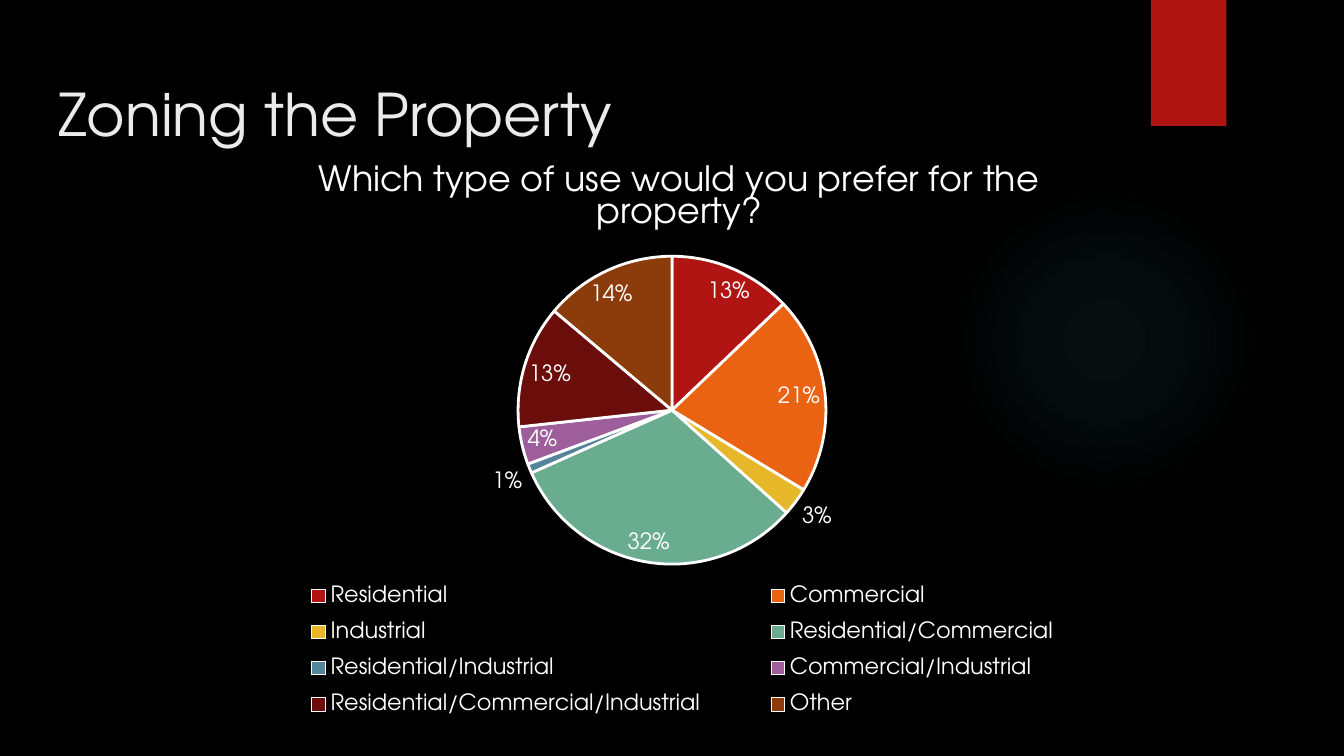
from typing import NamedTuple

from lxml.etree import SubElement
from pptx import Presentation
from pptx.chart.data import CategoryChartData
from pptx.dml.color import RGBColor
from pptx.enum.chart import XL_CHART_TYPE, XL_LABEL_POSITION, XL_LEGEND_POSITION
from pptx.enum.shapes import MSO_SHAPE
from pptx.enum.text import MSO_ANCHOR, PP_ALIGN
from pptx.oxml import parse_xml
from pptx.oxml.ns import nsdecls, qn
from pptx.util import Pt

PX = 9525  # 96 px to the inch
FACE = "TeX Gyre Adventor"
COLORS = {
    "back": "000000", "title": "EBEBEB", "text": "FFFFFF", "glow": "50B9C1",
    "red": "B01513", "orange": "EA6312", "yellow": "E6B729", "green": "6AAC90",
    "blue": "54849A", "purple": "9E5E9B", "wine": "6A0D0B", "brown": "8C3B0B",
}


class Box(NamedTuple):
    left: int
    top: int
    width: int
    height: int

    def emu(self) -> list[int]:
        return [n * PX for n in self]


class Slice(NamedTuple):
    name: str
    share: int
    color: str


SLICES = [
    Slice("Residential", 13, "red"),
    Slice("Commercial", 21, "orange"),
    Slice("Industrial", 3, "yellow"),
    Slice("Residential/Commercial", 32, "green"),
    Slice("Residential/Industrial", 1, "blue"),
    Slice("Commercial/Industrial", 4, "purple"),
    Slice("Residential/Commercial/Industrial", 13, "wine"),
    Slice("Other", 14, "brown"),
]


def rgb(name: str) -> RGBColor:
    return RGBColor.from_string(COLORS[name])


def style(font, size: float, color: str) -> None:
    font.name, font.size, font.bold = FACE, Pt(size), False
    font.color.rgb = rgb(color)


def add_shape(slide, kind, box: Box, color: str):
    shape = slide.shapes.add_shape(kind, *box.emu())
    shape.shadow.inherit = False
    shape.fill.solid()
    shape.fill.fore_color.rgb = rgb(color)
    shape.line.fill.background()
    return shape


def add_glow(slide, box: Box) -> None:
    """Draw a disc that fades out from its centre."""
    shape = add_shape(slide, MSO_SHAPE.OVAL, box, "glow")
    stops = "".join(
        f'<a:gs pos="{at * 1000}"><a:srgbClr val="{COLORS["glow"]}">'
        f'<a:alpha val="{alpha * 1000}"/></a:srgbClr></a:gs>'
        for at, alpha in [(0, 7), (36, 6), (69, 0), (100, 0)]
    )
    fill = parse_xml(
        f'<a:gradFill {nsdecls("a")}><a:gsLst>{stops}</a:gsLst><a:path path="circle">'
        '<a:fillToRect l="50000" t="50000" r="50000" b="50000"/></a:path></a:gradFill>'
    )
    props = shape._element.spPr
    props.replace(props.find(qn("a:solidFill")), fill)


def place(part, after: str | None, **values) -> None:
    """Fix a chart part, in fractions of the chart; its layout follows the tag after."""
    old = part.find(qn("c:layout"))
    if old is not None:
        part.remove(old)
    layout = parse_xml(f'<c:layout {nsdecls("c")}/>')
    if after:
        part.find(qn(after)).addnext(layout)
    else:
        part.insert(0, layout)
    manual = SubElement(layout, qn("c:manualLayout"))
    for tag, value in values.items():
        SubElement(manual, qn(f"c:{tag}")).set("val", str(value))


def add_pie(slide, box: Box, title: str, slices: list[Slice]) -> None:
    data = CategoryChartData()
    data.categories = [s.name for s in slices]
    data.add_series("Series 1", [s.share for s in slices])
    chart = slide.shapes.add_chart(XL_CHART_TYPE.PIE, *box.emu(), data).chart
    style(chart.font, 10, "text")

    chart.has_title = True
    head = chart.chart_title.text_frame
    head.text = title
    style(head.paragraphs[0].font, 18.72, "text")
    chart.chart_title.include_in_layout = False

    chart.has_legend = True
    chart.legend.position = XL_LEGEND_POSITION.BOTTOM
    chart.legend.include_in_layout = False
    style(chart.legend.font, 12, "text")

    plot = chart.plots[0]
    plot.vary_by_categories = True
    for i, part in enumerate(slices):
        form = plot.series[0].points[i].format
        form.fill.solid()
        form.fill.fore_color.rgb = rgb(part.color)
        form.line.color.rgb = rgb("text")
        form.line.width = Pt(1.5)

    labels = plot.series[0].data_labels
    labels.show_percentage = True
    labels.show_value = False
    labels.number_format, labels.number_format_is_linked = "0%", False
    labels.position = XL_LABEL_POSITION.BEST_FIT
    style(labels.font, 12, "text")

    root = chart._chartSpace.chart
    edge = {"xMode": "edge", "yMode": "edge"}
    place(root.find(qn("c:title")), "c:tx", **edge, x=0.16, y=0.01)
    place(root.plotArea, None, layoutTarget="inner", **edge,
          x=0.35, y=0.18, w=0.3, h=0.52)
    place(root.find(qn("c:legend")), "c:legendPos", **edge,
          x=0.1, y=0.71, w=0.82, h=0.27)


def set_title(slide, box: Box, text: str) -> None:
    title = slide.shapes.title
    title.left, title.top, title.width, title.height = box.emu()
    frame = title.text_frame
    frame.text = text
    frame.word_wrap = True
    frame.vertical_anchor = MSO_ANCHOR.MIDDLE
    frame.margin_left = frame.margin_right = 10 * PX
    frame.margin_top = frame.margin_bottom = 10 * PX
    frame.paragraphs[0].alignment = PP_ALIGN.LEFT
    style(frame.paragraphs[0].font, 31.5, "title")
    slide.shapes._spTree.append(title._element)  # in front of the decoration


def main() -> None:
    deck = Presentation()
    deck.slide_width, deck.slide_height = 960 * PX, 540 * PX
    slide = deck.slides.add_slide(deck.slide_layouts[5])
    slide.background.fill.solid()
    slide.background.fill.fore_color.rgb = rgb("back")

    add_glow(slide, Box(678, 132, 222, 222))
    add_shape(slide, MSO_SHAPE.RECTANGLE, Box(822, 0, 54, 90), "red")
    set_title(slide, Box(32, 51, 895, 60), "Zoning the Property")
    add_pie(slide, Box(102, 107, 756, 423),
            "Which type of use would you prefer for the property?", SLICES)
    deck.save("out.pptx")


if __name__ == "__main__":
    main()
